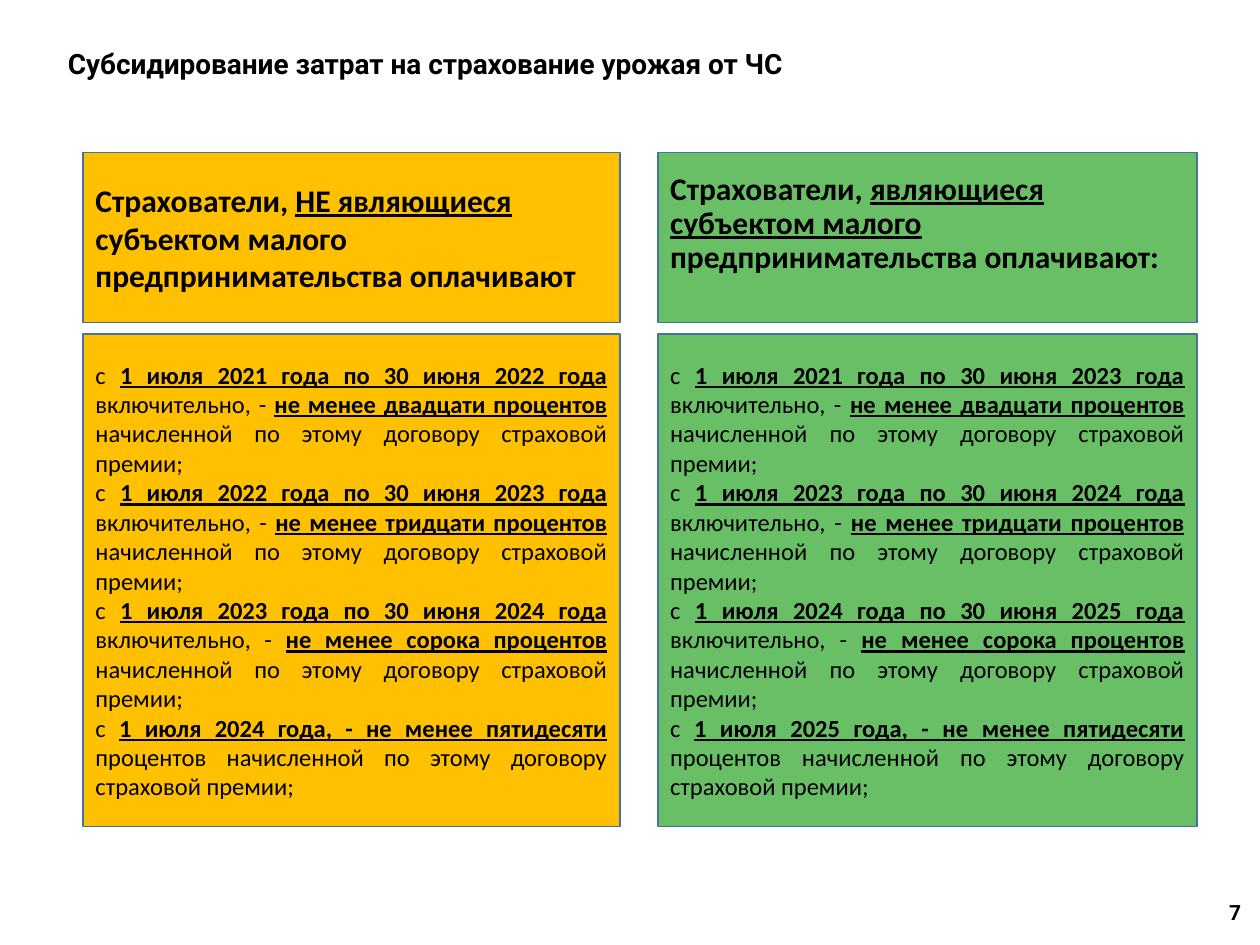
"""Build a slide comparing crop insurance payment shares for two groups of policyholders."""
from dataclasses import dataclass

import pptx
import pptx.dml.color
import pptx.enum.shapes
import pptx.enum.text
import pptx.util

Inches = pptx.util.Inches
Align = pptx.enum.text.PP_ALIGN

COLORS = {"text": "000000", "border": "43739E", "amber": "FFC000", "green": "69BF65"}
SHARES = ("двадцати", "тридцати", "сорока")
PREMIUM = "начисленной по этому договору страховой премии;"
HEADER_TOP, HEADER_HEIGHT = 1.21, 1.35
TERMS_TOP, TERMS_HEIGHT = 2.65, 3.91


@dataclass
class Column:
    """One policyholder group; every second heading part is underlined."""

    left: float
    width: float
    color: str
    heading: list[str]
    first_period_end: int
    heading_spacing: float = 1.0
    heading_bottom_inset: float = 0.05


COLUMNS = [
    Column(0.66, 4.26, "amber",
           ["Страхователи, ", "НЕ являющиеся ", "субъектом малого предпринимательства оплачивают"],
           2022),
    Column(5.22, 4.28, "green",
           ["Страхователи, ", "являющиеся субъектом малого ", "предпринимательства оплачивают:"],
           2023, heading_spacing=0.9, heading_bottom_inset=0.26),
]


def rgb(name: str) -> pptx.dml.color.RGBColor:
    """Return a named colour."""
    return pptx.dml.color.RGBColor.from_string(COLORS[name])


def write_text(shape, paragraphs: list[list[str]], *, size: float, font: str = "Calibri",
               bold: bool = False, align: Align = Align.LEFT, spacing: float = 1.0,
               bottom_inset: float = 0.05) -> None:
    """Write paragraphs whose every second part is bold and underlined."""
    frame = shape.text_frame
    frame.word_wrap = True
    frame.vertical_anchor = pptx.enum.text.MSO_ANCHOR.MIDDLE
    frame.margin_bottom = Inches(bottom_inset)
    for index, parts in enumerate(paragraphs):
        paragraph = frame.add_paragraph() if index else frame.paragraphs[0]
        paragraph.alignment = align
        paragraph.line_spacing = spacing
        for position, text in enumerate(parts):
            emphasized = position % 2 == 1
            run = paragraph.add_run()
            run.text = text
            run.font.name = font
            run.font.size = pptx.util.Pt(size)
            run.font.bold = bold or emphasized
            run.font.underline = emphasized
            run.font.color.rgb = rgb("text")


def add_label(slide, left: float, top: float, width: float, height: float, text: str,
              **text_format) -> None:
    """Add a bold Roboto text box."""
    box = slide.shapes.add_textbox(Inches(left), Inches(top), Inches(width), Inches(height))
    write_text(box, [[text]], font="Roboto", bold=True, **text_format)


def add_panel(slide, column: Column, top: float, height: float, paragraphs: list[list[str]],
              **text_format) -> None:
    """Add a filled rectangle with text in a column."""
    panel = slide.shapes.add_shape(
        pptx.enum.shapes.MSO_SHAPE.RECTANGLE,
        Inches(column.left), Inches(top), Inches(column.width), Inches(height))
    panel.shadow.inherit = False
    panel.fill.solid()
    panel.fill.fore_color.rgb = rgb(column.color)
    panel.line.color.rgb = rgb("border")
    panel.line.width = pptx.util.Pt(1)
    write_text(panel, paragraphs, **text_format)


def payment_terms(first_period_end: int) -> list[list[str]]:
    """Return the payment terms by period."""
    terms = []
    start = 2021
    for end, share in enumerate(SHARES, first_period_end):
        terms.append(["с ", f"1 июля {start} года по 30 июня {end} года ", "включительно, - ",
                      f"не менее {share} процентов ", PREMIUM])
        start = end
    terms.append(["с ", f"1 июля {start} года, - не менее пятидесяти ", f"процентов {PREMIUM}"])
    return terms


def main() -> None:
    """Build and save the presentation."""
    presentation = pptx.Presentation()
    presentation.slide_width = Inches(10)
    presentation.slide_height = Inches(7.5)
    slide = presentation.slides.add_slide(presentation.slide_layouts[6])

    add_label(slide, 0.44, 0.25, 9.31, 0.54,
              "Субсидирование затрат на страхование урожая от ЧС", size=16, spacing=0.9)
    for column in COLUMNS:
        add_panel(slide, column, HEADER_TOP, HEADER_HEIGHT, [column.heading], size=18, bold=True,
                  spacing=column.heading_spacing, bottom_inset=column.heading_bottom_inset)
        add_panel(slide, column, TERMS_TOP, TERMS_HEIGHT, payment_terms(column.first_period_end),
                  size=14, align=Align.JUSTIFY)
    add_label(slide, 9.18, 7.04, 0.77, 0.4, "7", size=12, align=Align.RIGHT)

    presentation.save("out.pptx")


if __name__ == "__main__":
    main()
